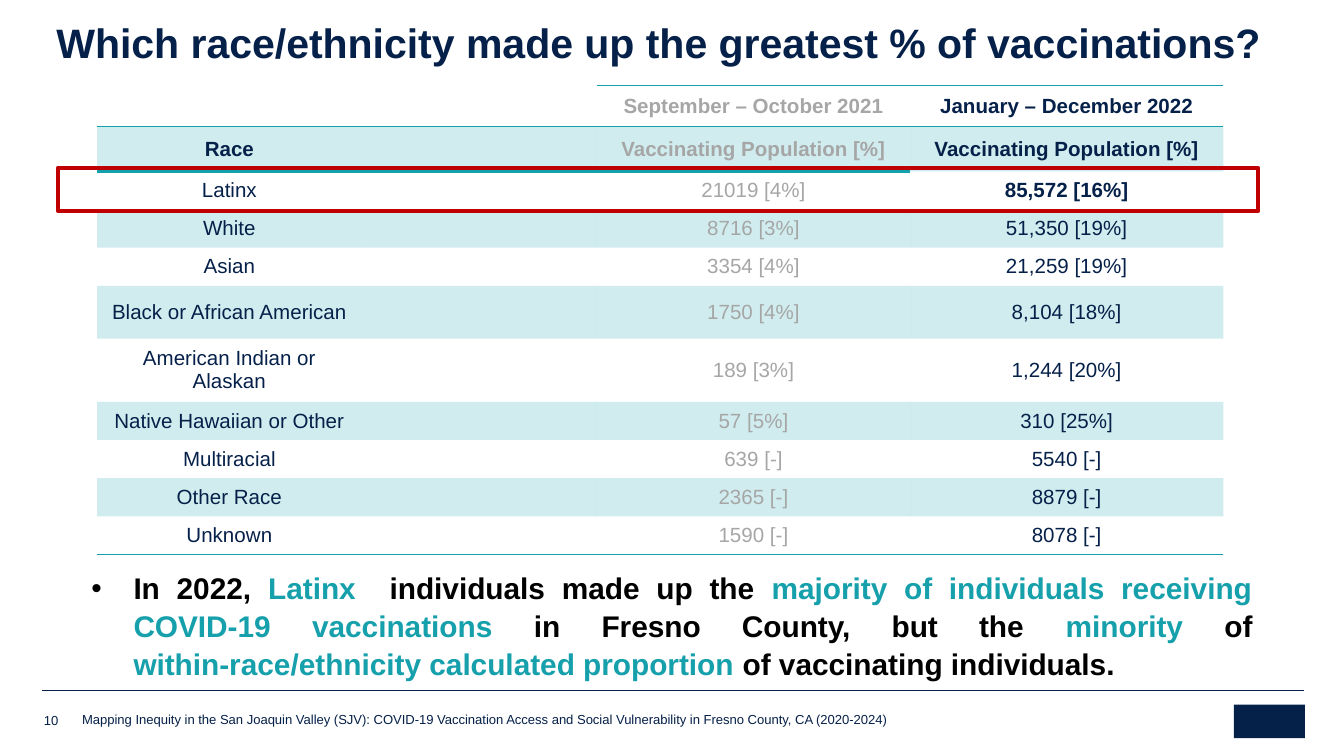
from lxml.etree import SubElement
from pptx import Presentation
from pptx.dml.color import RGBColor
from pptx.enum.shapes import MSO_CONNECTOR, MSO_SHAPE
from pptx.enum.text import MSO_ANCHOR, MSO_AUTO_SIZE, PP_ALIGN
from pptx.oxml.ns import qn
from pptx.util import Pt

NAVY, TEAL, GREY, BLACK, RED = "052049", "16A0AC", "A6A6A6", "000000", "C00000"
NO_STYLE = "{2D5ABB26-0587-4C30-8999-92F81FD0307C}"
COLUMNS = [141.8, 126, 167.8, 167.8]
HEIGHTS = {0: 22, 1: 24, 5: 28.4, 6: 33.8}
ROWS = [
    ("", "September – October 2021", "January – December 2022"),
    ("Race", "Vaccinating Population [%]", "Vaccinating Population [%]"),
    ("Latinx", "21019 [4%]", "85,572 [16%]"),
    ("White", "8716 [3%]", "51,350 [19%]"),
    ("Asian", "3354 [4%]", "21,259 [19%]"),
    ("Black or African American", "1750 [4%]", "8,104 [18%]"),
    ("American Indian or Alaskan", "189 [3%]", "1,244 [20%]"),
    ("Native Hawaiian or Other", "57 [5%]", "310 [25%]"),
    ("Multiracial", "639 [-]", "5540 [-]"),
    ("Other Race", "2365 [-]", "8879 [-]"),
    ("Unknown", "1590 [-]", "8078 [-]"),
]
FINDING = [
    ("In 2022, ", BLACK),
    ("Latinx  ", TEAL),
    ("individuals made up the ", BLACK),
    ("majority of individuals receiving COVID-19 vaccinations", TEAL),
    (" in Fresno County, but the ", BLACK),
    ("minority ", TEAL),
    ("of ", BLACK),
    ("within-race/ethnicity calculated proportion", TEAL),
    (" of vaccinating individuals.", BLACK),
]
FOOTER = ("Mapping Inequity in the San Joaquin Valley (SJV): COVID-19 Vaccination Access "
          "and Social Vulnerability in Fresno County, CA (2020-2024)")


def rgb(value):
    """Turn a hex string into a colour."""
    return RGBColor.from_string(value)


def format_run(r, size, color, bold=False):
    """Set the font of one run."""
    r.font.name, r.font.size, r.font.bold = "Arial", Pt(size), bold
    r.font.color.rgb = rgb(color)


def place(sp, left, top, width, height):
    """Move and size a shape."""
    sp.left, sp.top, sp.width, sp.height = Pt(left), Pt(top), Pt(width), Pt(height)


def clear_insets(tf):
    """Remove the inner margins of a text frame."""
    tf.margin_left = tf.margin_right = tf.margin_top = tf.margin_bottom = 0


def add_title(s, text):
    """Fill the title placeholder."""
    sp = s.shapes.title
    place(sp, 23, 10, 688, 33)
    tf = sp.text_frame
    tf.text = text
    tf.word_wrap, tf.auto_size = True, MSO_AUTO_SIZE.NONE
    tf.vertical_anchor = MSO_ANCHOR.TOP
    p = tf.paragraphs[0]
    p.alignment, p.line_spacing = PP_ALIGN.LEFT, 0.85
    format_run(p.runs[0], 22, NAVY, True)


def add_finding(s, parts):
    """Fill the body placeholder with one justified bullet."""
    sp = s.placeholders[1]
    place(sp, 49, 304.5, 622, 58.5)
    tf = sp.text_frame
    clear_insets(tf)
    tf.word_wrap, tf.auto_size = True, MSO_AUTO_SIZE.NONE
    p = tf.paragraphs[0]
    p.alignment, p.line_spacing, p.space_before = PP_ALIGN.JUSTIFY, 1.05, Pt(0)
    pPr = p._p.get_or_add_pPr()
    pPr.set("marL", str(Pt(22.5)))
    pPr.set("indent", str(Pt(-22.5)))
    SubElement(pPr, qn("a:buFont"), typeface="Arial")
    SubElement(pPr, qn("a:buChar"), char="•")
    for text, color in parts:
        r = p.add_run()
        r.text = text
        format_run(r, 16, color, True)


def add_note(s, text, left, top, width, height):
    """Add a small bottom-anchored footer text."""
    tf = s.shapes.add_textbox(Pt(left), Pt(top), Pt(width), Pt(height)).text_frame
    clear_insets(tf)
    tf.word_wrap, tf.vertical_anchor = True, MSO_ANCHOR.BOTTOM
    tf.text = text
    format_run(tf.paragraphs[0].runs[0], 7, NAVY)


def add_rect(s, left, top, width, height, fill=None, line=None):
    """Add a rectangle that is either filled or outlined."""
    sp = s.shapes.add_shape(MSO_SHAPE.RECTANGLE, Pt(left), Pt(top), Pt(width), Pt(height))
    sp.shadow.inherit = False
    if fill:
        sp.fill.solid()
        sp.fill.fore_color.rgb = rgb(fill)
    else:
        sp.fill.background()
    if line:
        sp.line.color.rgb, sp.line.width = rgb(line), Pt(2.25)
    else:
        sp.line.fill.background()


def add_rule(s, left, right, y):
    """Add a thin horizontal line."""
    line = s.shapes.add_connector(MSO_CONNECTOR.STRAIGHT, Pt(left), Pt(y), Pt(right), Pt(y))
    line.line.color.rgb, line.line.width = rgb(NAVY), Pt(0.25)
    SubElement(line._element.spPr, qn("a:effectLst"))


def add_border(cell, edge, width=1):
    """Draw one teal edge of a cell."""
    tcPr = cell._tc.get_or_add_tcPr()
    ln = tcPr.makeelement(qn(f"a:{edge}"), {"w": str(Pt(width))})
    SubElement(SubElement(ln, qn("a:solidFill")), qn("a:srgbClr"), val=TEAL)
    tcPr.insert(len(tcPr.findall(qn("a:lnT"))), ln)


def fill_cell(cell, shaded):
    """Give a cell a light teal band or no fill."""
    if shaded:
        cell.fill.solid()
        cell.fill.fore_color.rgb = rgb(TEAL)
        SubElement(cell._tc.tcPr.find(".//" + qn("a:srgbClr")), qn("a:alpha"), val="20000")
    else:
        cell.fill.background()


def write_cell(cell, text, color, bold):
    """Write centred text in a cell, keeping empty cells low."""
    cell.vertical_anchor = MSO_ANCHOR.MIDDLE
    p = cell.text_frame.paragraphs[0]
    p.alignment = PP_ALIGN.CENTER
    if text:
        p.text = text
        format_run(p.runs[0], 11, color, bold)
    else:
        p._p.get_or_add_endParaRPr().set("sz", "1100")


def add_vaccination_table(s):
    """Add the table of vaccinations by race and period."""
    heights = [HEIGHTS.get(i, 20.4) for i in range(len(ROWS))]
    frame = s.shapes.add_table(len(ROWS), len(COLUMNS), Pt(52), Pt(45.8),
                               Pt(sum(COLUMNS)), Pt(sum(heights)))
    table = frame.table
    table.first_row = table.horz_banding = False
    table._tbl.tblPr.find(qn("a:tableStyleId")).text = NO_STYLE
    for column, width in zip(table.columns, COLUMNS):
        column.width = Pt(width)
    for i, (race, early, late) in enumerate(ROWS):
        table.rows[i].height = Pt(heights[i])
        for j, text in enumerate((race, "", early, late)):
            cell = table.cell(i, j)
            bold = i < 2 or (race == "Latinx" and j == 3)
            write_cell(cell, text, GREY if j == 2 else NAVY, bold)
            fill_cell(cell, i % 2 == 1)
            if i == 0 and j > 1:
                add_border(cell, "lnT")
            if i in (0, len(ROWS) - 1):
                add_border(cell, "lnB")
            if i == 1 and j < 3:
                add_border(cell, "lnB", 1.5)
    table.cell(0, 0).merge(table.cell(0, 1))


def main():
    """Build the slide and save it."""
    prs = Presentation()
    prs.slide_width, prs.slide_height = Pt(720), Pt(405)
    s = prs.slides.add_slide(prs.slide_layouts[1])
    add_rule(s, 22.5, 698.5, 370)
    add_rect(s, 661, 377.5, 38, 18, fill=NAVY)
    add_note(s, FOOTER, 44, 384, 586, 5.5)
    add_note(s, "10", 23.5, 382, 19.5, 8)
    add_finding(s, FINDING)
    add_vaccination_table(s)
    add_rect(s, 31, 90, 643, 23, line=RED)
    add_title(s, "Which race/ethnicity made up the greatest % of vaccinations?")
    prs.save("out.pptx")


if __name__ == "__main__":
    main()
